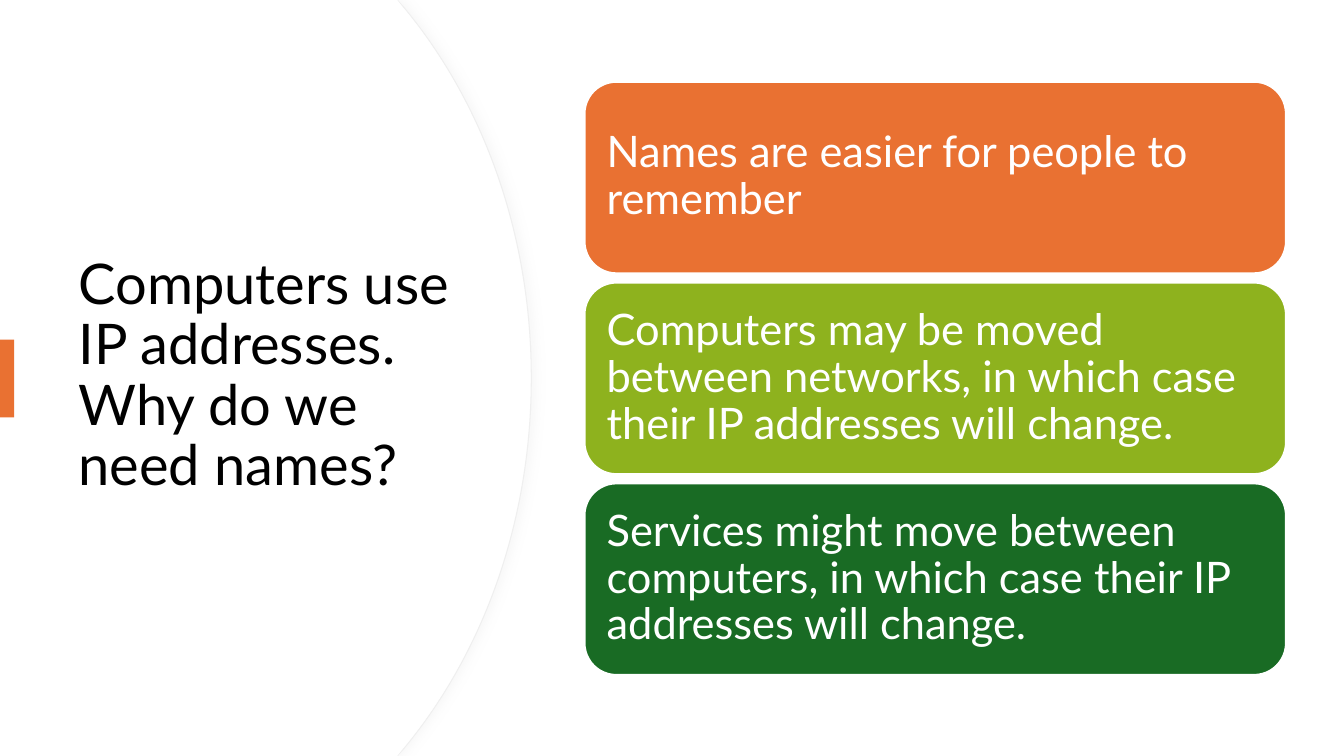
from dataclasses import dataclass

from lxml.etree import Element, SubElement
from pptx import Presentation
from pptx.dml.color import RGBColor
from pptx.enum.shapes import MSO_SHAPE as Preset
from pptx.enum.text import MSO_ANCHOR as Anchor, MSO_AUTO_SIZE as AutoSize, PP_ALIGN as Align
from pptx.oxml.ns import qn
from pptx.shapes.autoshape import Shape
from pptx.slide import Slide
from pptx.text.text import TextFrame
from pptx.util import Cm, Pt


@dataclass(frozen=True)
class Theme:
    font: str = "Lato"
    title_size: float = 40
    card_size: float = 31
    line_spacing: float = 0.9
    black: str = "000000"
    white: str = "FFFFFF"
    orange: str = "E97132"
    lime: str = "8EB21E"
    green: str = "196B24"
    outline: str = "EFEFEF"
    shadow: str = "D9D9D9"
    shadow_opacity: int = 20


@dataclass(frozen=True)
class Box:
    left: float
    top: float
    width: float
    height: float

    def lengths(self) -> tuple[Cm, Cm, Cm, Cm]:
        return Cm(self.left), Cm(self.top), Cm(self.width), Cm(self.height)

    def moved_down(self, distance: float) -> "Box":
        return Box(self.left, self.top + distance, self.width, self.height)


@dataclass(frozen=True)
class Card:
    text: str
    color: str


THEME = Theme()
SLIDE_WIDTH, SLIDE_HEIGHT = 33.87, 19.05
TITLE_BOX = Box(1.73, 3.21, 10.01, 12.57)
ACCENT_BOX = Box(0, 8.56, 0.36, 1.96)
CARD_BOX = Box(14.73, 2.06, 17.68, 4.83)
CARD_TEXT_BOX = Box(14.96, 2.3, 17.2, 4.34)
CARD_PITCH = 5.06
CARD_INSET = 0.33

TITLE_LINES = ("Computers use IP addresses. ", "Why do we need names?")
CARDS = (
    Card("Names are easier for people to remember", THEME.orange),
    Card("Computers may be moved between networks, in which case their IP addresses will change.",
         THEME.lime),
    Card("Services might move between computers, in which case their IP addresses will change.",
         THEME.green),
)


def rgb(color: str) -> RGBColor:
    return RGBColor.from_string(color)


def paint(shape: Shape, fill: str, line: str | None = None, line_width: float = 0) -> None:
    shape.shadow.inherit = False
    shape.fill.solid()
    shape.fill.fore_color.rgb = rgb(fill)
    if line is None:
        shape.line.fill.background()
    else:
        shape.line.color.rgb = rgb(line)
        shape.line.width = Pt(line_width)


def write_text(frame: TextFrame, lines: tuple[str, ...], size: float, color: str) -> None:
    """Write one left-aligned paragraph with a line break between lines."""
    frame_format = {"word_wrap": True, "auto_size": AutoSize.NONE,
                    "vertical_anchor": Anchor.MIDDLE}
    for name, value in frame_format.items():
        setattr(frame, name, value)
    paragraph = frame.paragraphs[0]
    paragraph.alignment = Align.LEFT
    paragraph.line_spacing = THEME.line_spacing
    for index, line in enumerate(lines):
        if index:
            paragraph.add_line_break()
        run = paragraph.add_run()
        run.text = line
        for name, value in {"name": THEME.font, "size": Pt(size)}.items():
            setattr(run.font, name, value)
        run.font.color.rgb = rgb(color)


def add_panel(slide: Slide, shift: float) -> Shape:
    """Add the left panel, whose right side bulges in two mirrored curves."""
    middle, bottom = SLIDE_HEIGHT / 2, SLIDE_HEIGHT
    shoulder, handle, bulge = 10.19 - shift, 12.17 - shift, 13.39 - shift
    corners = ((10.01, 0), (shoulder, 0.2), (bulge, middle), (shoulder, bottom - 0.2),
               (10.01, bottom), (0, bottom))
    builder = slide.shapes.build_freeform(0, 0)
    builder.add_line_segments([(Cm(x), Cm(y)) for x, y in corners], close=True)
    panel = builder.convert_to_shape()

    segments = list(panel.element.iter(qn("a:lnTo")))
    upper_handles = ((handle, 2.59), (bulge, 5.89))
    lower_handles = tuple((x, bottom - y) for x, y in reversed(upper_handles))
    for segment, handles in zip(segments[2:4], (upper_handles, lower_handles)):
        segment.tag = qn("a:cubicBezTo")
        for index, (x, y) in enumerate(handles):
            segment.insert(index, Element(qn("a:pt"), x=str(Cm(x)), y=str(Cm(y))))
    return panel


def add_soft_shadow(shape: Shape) -> None:
    effects = shape.element.spPr.find(qn("a:effectLst"))
    shadow = SubElement(effects, qn("a:outerShdw"), blurRad=str(Pt(7)), dist=str(Pt(3)),
                        dir="0", algn="l", rotWithShape="0")
    color = SubElement(shadow, qn("a:srgbClr"), val=THEME.shadow)
    SubElement(color, qn("a:alpha"), val=str(THEME.shadow_opacity * 1000))


def add_title(slide: Slide) -> None:
    title = slide.shapes.title
    names = ("left", "top", "width", "height")
    for name, value in zip(names, TITLE_BOX.lengths()):
        setattr(title, name, value)
    write_text(title.text_frame, TITLE_LINES, THEME.title_size, THEME.black)
    # The panels are drawn first, so the title moves in front of them.
    slide.shapes.element.append(title.element)


def add_card(slide: Slide, card: Card, index: int) -> None:
    offset = index * CARD_PITCH
    shape = slide.shapes.add_shape(Preset.ROUNDED_RECTANGLE,
                                   *CARD_BOX.moved_down(offset).lengths())
    paint(shape, card.color, THEME.white, 1.5)
    label = slide.shapes.add_textbox(*CARD_TEXT_BOX.moved_down(offset).lengths())
    for side in ("left", "top", "right", "bottom"):
        setattr(label.text_frame, f"margin_{side}", Cm(CARD_INSET))
    write_text(label.text_frame, (card.text,), THEME.card_size, THEME.white)


def main() -> None:
    presentation = Presentation()
    presentation.slide_width = Cm(SLIDE_WIDTH)
    presentation.slide_height = Cm(SLIDE_HEIGHT)
    slide = presentation.slides.add_slide(presentation.slide_layouts.get_by_name("Title Only"))

    outlined_panel = add_panel(slide, 0)
    paint(outlined_panel, THEME.white, THEME.outline, 0.75)
    add_soft_shadow(outlined_panel)
    paint(add_panel(slide, 0.03), THEME.white)

    add_title(slide)
    paint(slide.shapes.add_shape(Preset.RECTANGLE, *ACCENT_BOX.lengths()), THEME.orange)
    for index, card in enumerate(CARDS):
        add_card(slide, card, index)
    presentation.save("out.pptx")


if __name__ == "__main__":
    main()
